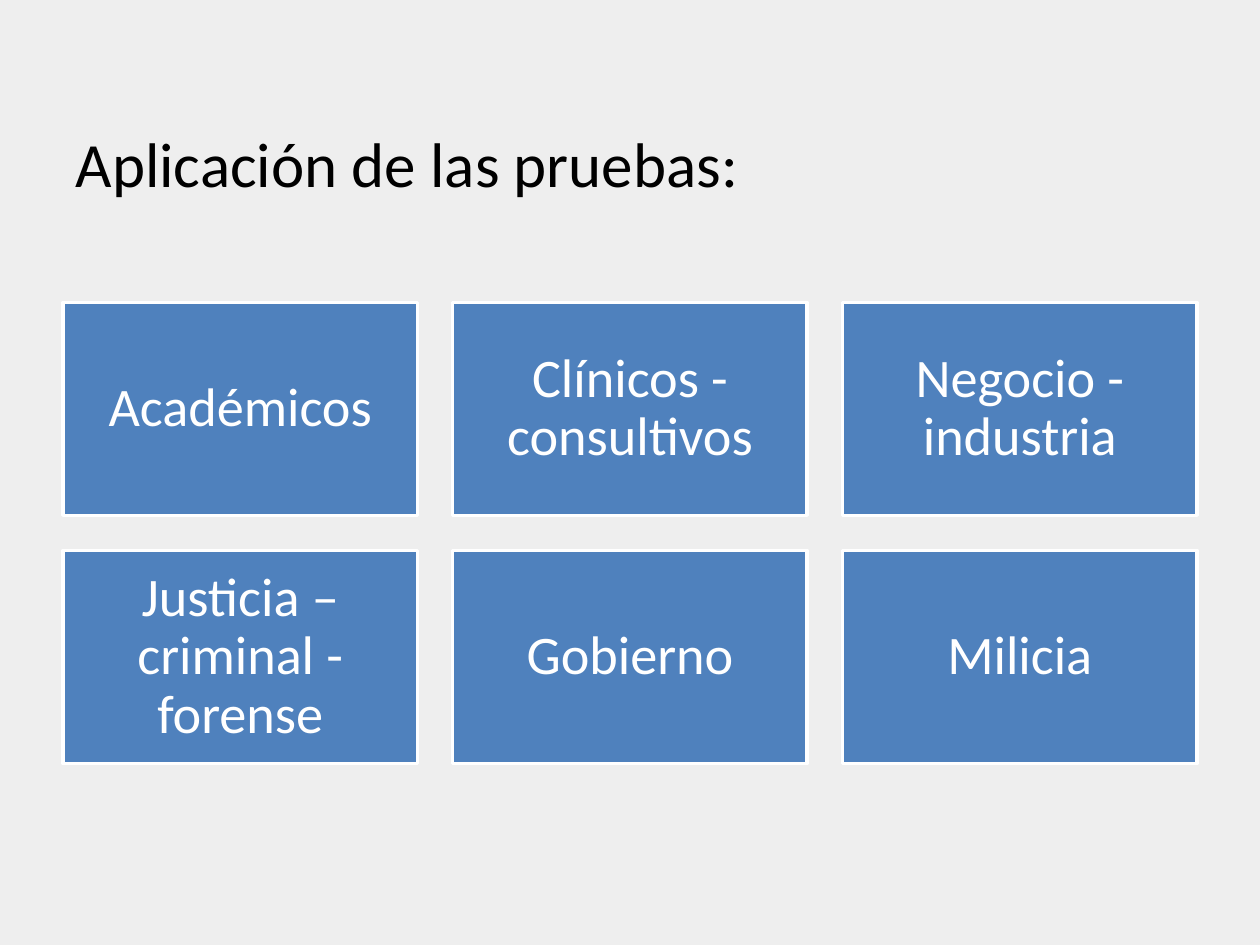
from pptx import Presentation
from pptx.dml.color import RGBColor
from pptx.enum import shapes, text
from pptx.util import Inches, Pt

GRAY = RGBColor(0xEE, 0xEE, 0xEE)
BLUE = RGBColor(0x4F, 0x81, 0xBD)
WHITE = RGBColor(0xFF, 0xFF, 0xFF)
BLACK = RGBColor(0, 0, 0)
FONT = "Calibri"

FIELDS = [
    "Académicos", "Clínicos - consultivos", "Negocio - industria",
    "Justicia – criminal - forense", "Gobierno", "Milicia",
]


def style_paragraph(para, size, color, alignment):
    para.alignment = alignment
    para.font.name = FONT
    para.font.size = Pt(size)
    para.font.color.rgb = color


def place_title(page, wording, left, top, width, height):
    title = page.shapes.title
    title.left, title.top, title.width, title.height = left, top, width, height
    frame = title.text_frame
    frame.text = wording
    frame.auto_size = text.MSO_AUTO_SIZE.NONE
    frame.vertical_anchor = text.MSO_ANCHOR.BOTTOM
    style_paragraph(frame.paragraphs[0], 36, BLACK, text.PP_ALIGN.LEFT)


def add_card(page, label, left, top, width, height):
    card = page.shapes.add_shape(shapes.MSO_SHAPE.RECTANGLE, left, top, width, height)
    card.shadow.inherit = False
    card.fill.solid()
    card.fill.fore_color.rgb = BLUE
    card.line.color.rgb = WHITE
    card.line.width = Pt(2)
    frame = card.text_frame
    frame.word_wrap = True
    frame.vertical_anchor = text.MSO_ANCHOR.MIDDLE
    frame.margin_left = frame.margin_right = Inches(0.13)
    frame.margin_top = frame.margin_bottom = Inches(0.13)
    frame.text = label
    para = frame.paragraphs[0]
    para.line_spacing = 0.9
    style_paragraph(para, 31, WHITE, text.PP_ALIGN.CENTER)


def add_card_grid(page, labels, left, top, width, height, columns=3, gap=Inches(0.28)):
    """Fill the box row by row with equal cards."""
    rows = -(-len(labels) // columns)
    card_width = (width - gap * (columns - 1)) // columns
    card_height = (height - gap * (rows - 1)) // rows
    for index, label in enumerate(labels):
        row, column = divmod(index, columns)
        add_card(page, label,
                 left + column * (card_width + gap), top + row * (card_height + gap),
                 card_width, card_height)


def main():
    deck = Presentation()
    deck.slide_width, deck.slide_height = Inches(10), Inches(7.5)
    page = deck.slides.add_slide(deck.slide_layouts.get_by_name("Title Only"))
    page.background.fill.solid()
    page.background.fill.fore_color.rgb = GRAY
    place_title(page, "Aplicación de las pruebas:",
                Inches(0.5), Inches(0.39), Inches(9), Inches(1.25))
    add_card_grid(page, FIELDS, Inches(0.5), Inches(2.4), Inches(9), Inches(3.66))
    deck.save("out.pptx")


if __name__ == "__main__":
    main()
